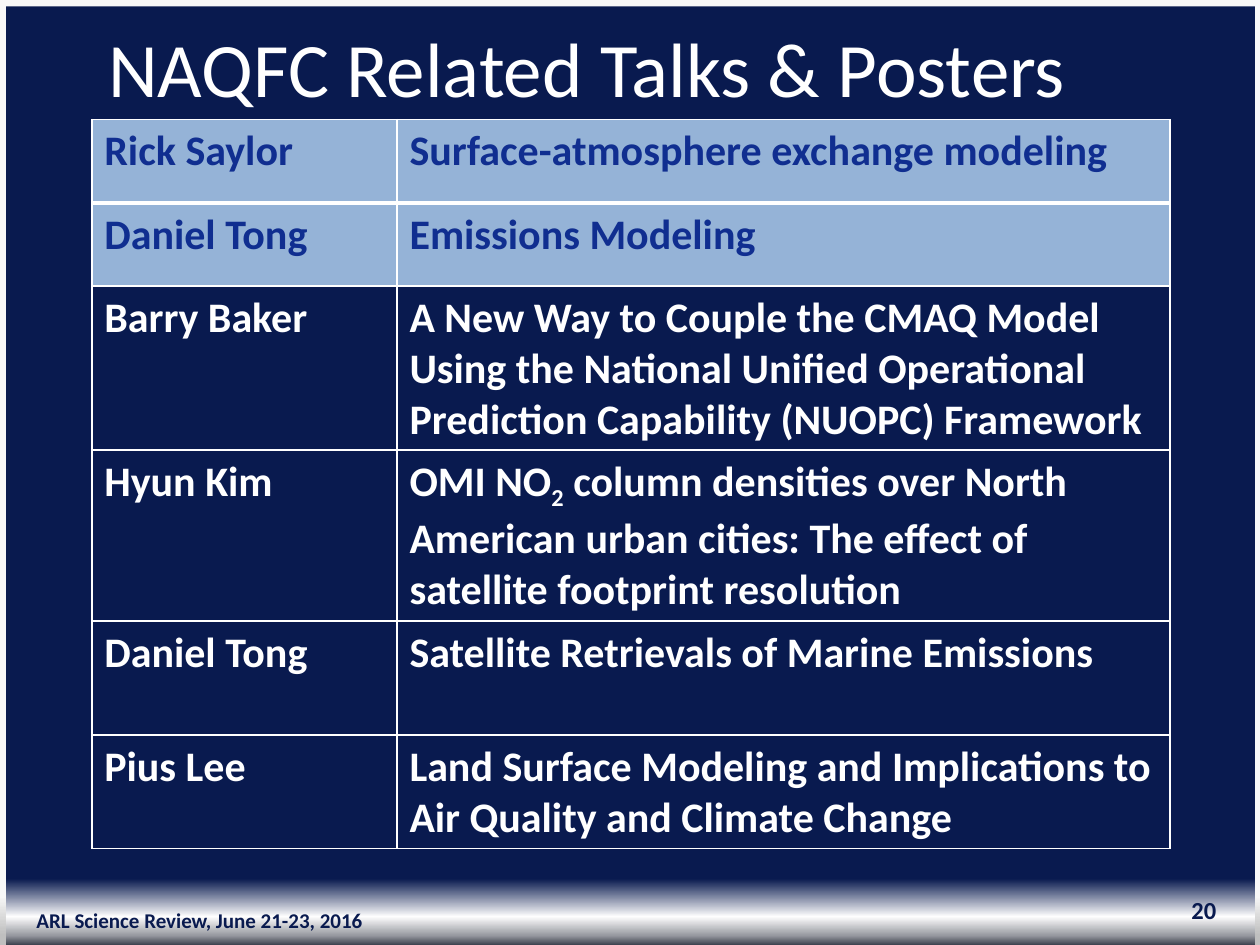
from lxml.etree import SubElement
from pptx import Presentation
from pptx.dml.color import RGBColor
from pptx.enum.shapes import MSO_SHAPE
from pptx.enum.text import MSO_ANCHOR, MSO_AUTO_SIZE, PP_ALIGN
from pptx.oxml import parse_xml
from pptx.oxml.ns import nsdecls, qn
from pptx.util import Cm, Pt

WIDTH, HEIGHT = 25.4, 19.05
NAVY, BLUE, LIGHT_BLUE, WHITE, SILVER = "091A4F", "102E90", "95B3D7", "FFFFFF", "F8F8F8"
FONT = "Calibri"

BACKGROUND_STOPS = [(93, NAVY), (97, "FEFEFE"), (99, "9799A0"), (100, "3C414E")]
BAR_STOPS = [(0, SILVER), (95, "F5F5F5"), (99, "BFBFBF")]

# Speaker, and the talk as (text, is subscript) parts
TALKS = [
    ("Rick Saylor", [("Surface-atmosphere exchange modeling", False)]),
    ("Daniel Tong", [("Emissions Modeling", False)]),
    ("Barry Baker", [("A New Way to Couple the CMAQ Model Using the National Unified "
                      "Operational Prediction Capability (NUOPC) Framework", False)]),
    ("Hyun Kim", [("OMI NO", False), ("2", True),
                  (" column densities over North American urban cities: "
                   "The effect of satellite footprint resolution", False)]),
    ("Daniel Tong", [("Satellite Retrievals of Marine Emissions", False)]),
    ("Pius Lee", [("Land Surface Modeling and Implications to Air Quality "
                   "and Climate Change", False)]),
]
HIGHLIGHTED_ROWS = 2
ROW_HEIGHTS = [1.68, 1.68, 3.28, 3.45, 2.29, 2.29]
SPEAKER_SHARE = 0.283


def color(value):
    return RGBColor.from_string(value)


def set_font(p, size, value, bold=False):
    font = p.font
    font.name, font.size, font.bold = FONT, Pt(size), bold
    font.color.rgb = color(value)


def set_gradient(fill, element, stops):
    """Fill from top to bottom with (percent, colour) stops."""
    fill.gradient()
    grad = element.find(".//" + qn("a:gradFill"))
    stop_xml = "".join(
        f'<a:gs pos="{percent * 1000}"><a:srgbClr val="{value}"/></a:gs>'
        for percent, value in stops)
    grad.getparent().replace(grad, parse_xml(
        f'<a:gradFill {nsdecls("a")} rotWithShape="1"><a:gsLst>{stop_xml}</a:gsLst>'
        '<a:lin ang="5400000" scaled="0"/></a:gradFill>'))


def add_bar(s, left, top, width, height, stops=None):
    bar = s.shapes.add_shape(MSO_SHAPE.RECTANGLE, Cm(left), Cm(top), Cm(width), Cm(height))
    bar.shadow.inherit = False
    bar.line.fill.background()
    if stops:
        set_gradient(bar.fill, bar.element, stops)
    else:
        bar.fill.solid()
        bar.fill.fore_color.rgb = color(SILVER)


def add_frame(s, width, height, thickness=0.13):
    """Background with light bars along the left, top and right edges."""
    set_gradient(s.background.fill, s.element, BACKGROUND_STOPS)
    add_bar(s, 0, 0, thickness, height, BAR_STOPS)
    add_bar(s, 0.05, 0, width - 0.05, thickness)
    add_bar(s, width - 0.1, 0, thickness, height, BAR_STOPS)


def add_label(s, left, top, width, text, size, align):
    tf = s.shapes.add_textbox(Cm(left), Cm(top), Cm(width), Cm(1.02)).text_frame
    tf.word_wrap = True
    tf.vertical_anchor = MSO_ANCHOR.MIDDLE
    p = tf.paragraphs[0]
    p.text, p.alignment = text, align
    set_font(p, size, NAVY, bold=True)


def add_footer(s, top):
    add_label(s, 0, top + 0.2, 8.05, "ARL Science Review, June 21-23, 2016", 12,
              PP_ALIGN.CENTER)
    add_label(s, 18.85, top, 5.92, "20", 14, PP_ALIGN.RIGHT)


def set_title(s, left, top, width, height, text):
    title = s.shapes.title
    title.left, title.top, title.width, title.height = map(Cm, (left, top, width, height))
    tf = title.text_frame
    tf.auto_size = MSO_AUTO_SIZE.SHAPE_TO_FIT_TEXT
    tf.vertical_anchor = MSO_ANCHOR.TOP
    p = tf.paragraphs[0]
    p.text, p.alignment = text, PP_ALIGN.CENTER
    set_font(p, 44, WHITE)


def set_borders(cell, top=1, bottom=1):
    tc_pr = cell._tc.get_or_add_tcPr()
    sides = [("lnL", 1), ("lnR", 1), ("lnT", top), ("lnB", bottom)]
    for i, (side, points) in enumerate(sides):
        line = SubElement(tc_pr, qn(f"a:{side}"), w=str(Pt(points)))
        fill = SubElement(line, qn("a:solidFill"))
        SubElement(fill, qn("a:srgbClr"), val=WHITE)
        tc_pr.insert(i, line)


def fill_cell(cell, parts, highlighted):
    cell.fill.solid()
    cell.fill.fore_color.rgb = color(LIGHT_BLUE if highlighted else NAVY)
    p = cell.text_frame.paragraphs[0]
    set_font(p, 24, BLUE if highlighted else WHITE, bold=True)
    for text, subscript in parts:
        r = p.add_run()
        r.text = text
        if subscript:
            r.font._element.set("baseline", "-25000")


def add_talks(s, left, top, width):
    table = s.shapes.add_table(len(TALKS), 2, Cm(left), Cm(top), Cm(width),
                               Cm(sum(ROW_HEIGHTS))).table
    table.columns[0].width = Cm(width * SPEAKER_SHARE)
    table.columns[1].width = Cm(width * (1 - SPEAKER_SHARE))
    for i, (speaker, talk) in enumerate(TALKS):
        table.rows[i].height = Cm(ROW_HEIGHTS[i])
        for j, parts in enumerate(([(speaker, False)], talk)):
            cell = table.cell(i, j)
            fill_cell(cell, parts, i < HIGHLIGHTED_ROWS)
            set_borders(cell, top=3 if i == 1 else 1, bottom=3 if i == 0 else 1)


def main():
    prs = Presentation()
    prs.slide_width, prs.slide_height = Cm(WIDTH), Cm(HEIGHT)
    s = prs.slides.add_slide(prs.slide_layouts[5])
    add_frame(s, WIDTH, HEIGHT)
    add_footer(s, 17.83)
    set_title(s, -0.84, 0.28, 25.35, 2.13, "NAQFC Related Talks & Posters")
    add_talks(s, 1.85, 2.41, 21.74)
    prs.save("out.pptx")


if __name__ == "__main__":
    main()
